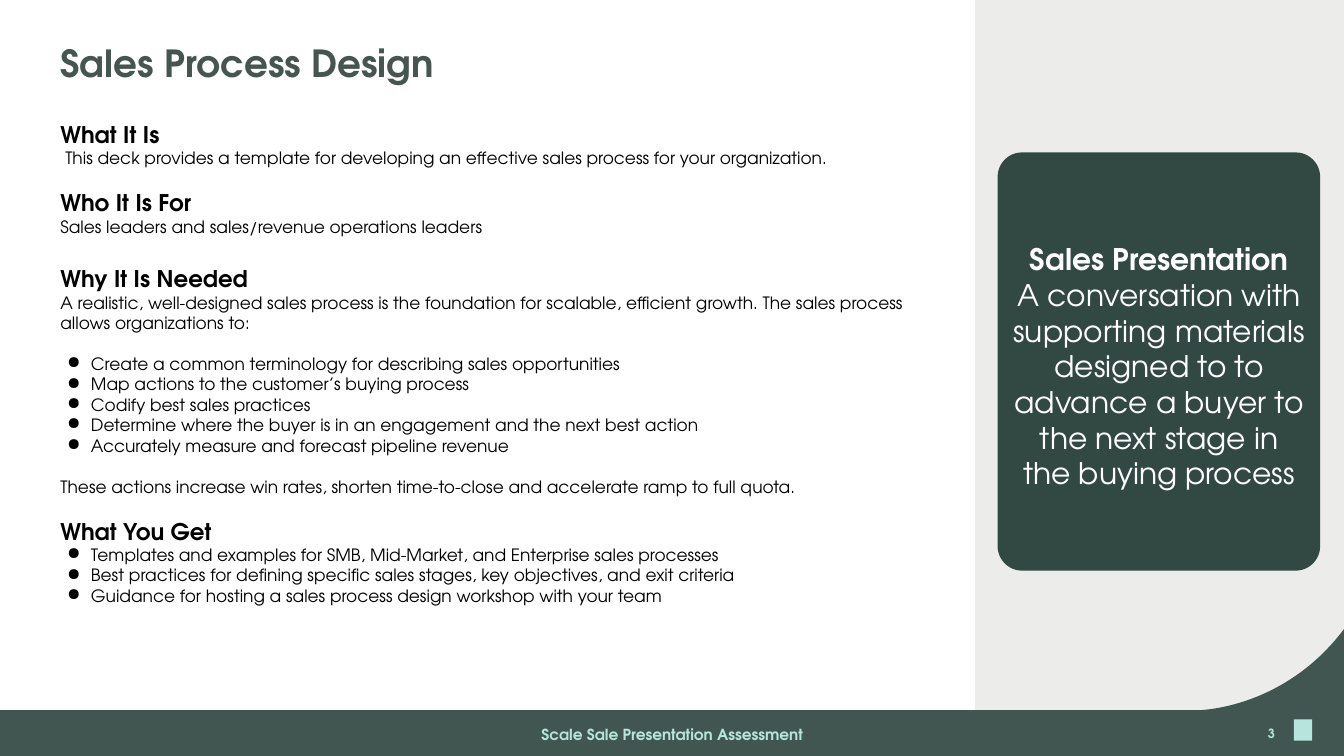
from dataclasses import dataclass

from lxml.etree import SubElement
from pptx import Presentation
from pptx.dml.color import RGBColor
from pptx.enum.shapes import MSO_SHAPE as Shape
from pptx.enum.text import MSO_ANCHOR as Anchor, PP_ALIGN as Align
from pptx.oxml.ns import qn
from pptx.util import Inches, Pt

COLUMNS, ROWS = 220, 124


@dataclass(frozen=True)
class Theme:
    """Colours and type sizes of the slide."""
    font: str = "TeX Gyre Adventor"
    title: str = "455550"
    ink: str = "000000"
    white: str = "FFFFFF"
    panel: str = "ECEDEB"
    card: str = "324943"
    footer: str = "415651"
    mint: str = "B5E5DC"
    title_size: int = 44
    card_size: int = 35
    heading_size: int = 27
    body_size: int = 20
    footer_size: int = 18
    number_size: int = 15


class SlideBuilder:
    """Draws styled elements on one slide, placed by grid columns and rows."""

    def __init__(self, presentation, theme):
        self.theme = theme
        self.column = presentation.slide_width / COLUMNS
        self.row = presentation.slide_height / ROWS
        self.slide = presentation.slides.add_slide(presentation.slide_layouts[6])

    def place(self, left, top, width, height):
        """Turn grid units into slide lengths."""
        return (round(left * self.column), round(top * self.row),
                round(width * self.column), round(height * self.row))

    def paint(self, shape, colour):
        """Give a shape a flat fill without line or shadow."""
        shape.shadow.inherit = False
        shape.fill.solid()
        shape.fill.fore_color.rgb = RGBColor.from_string(colour)
        shape.line.fill.background()

    def block(self, area, colour, radius=None):
        """Add a rectangle, rounded when a radius is given."""
        kind = Shape.RECTANGLE if radius is None else Shape.ROUNDED_RECTANGLE
        shape = self.slide.shapes.add_shape(kind, *self.place(*area))
        if radius is not None:
            shape.adjustments[0] = radius
        self.paint(shape, colour)

    def swoosh(self, top, bend, peak, colour, steps=40):
        """Add a full-width band whose right end curves upwards."""
        controls = ((bend, top), (bend, top), (COLUMNS - 10, top), (COLUMNS, peak))
        points = [(0, ROWS), (0, top)]
        for step in range(steps + 1):
            t = step / steps
            weights = ((1 - t) ** 3, 3 * t * (1 - t) ** 2, 3 * t * t * (1 - t), t ** 3)
            points.append(tuple(sum(w * point[axis] for w, point in zip(weights, controls))
                                for axis in (0, 1)))
        points.append((COLUMNS, ROWS))
        corners = [(round(x * self.column), round(y * self.row)) for x, y in points]
        builder = self.slide.shapes.build_freeform(*corners[0])
        builder.add_line_segments(corners[1:], close=True)
        self.paint(builder.convert_to_shape(), colour)

    def text(self, area, paragraphs, colour, inset=0.05, anchor=Anchor.MIDDLE, **common):
        """Add a text box; each paragraph is a text and a dict of formats."""
        frame = self.slide.shapes.add_textbox(*self.place(*area)).text_frame
        settings = {"word_wrap": True, "vertical_anchor": anchor,
                    "margin_left": Inches(0.1), "margin_right": Inches(0.1),
                    "margin_top": Inches(inset), "margin_bottom": Inches(inset)}
        for name, value in settings.items():
            setattr(frame, name, value)
        for index, (words, formats) in enumerate(paragraphs):
            paragraph = frame.add_paragraph() if index else frame.paragraphs[0]
            self.format(paragraph, words, colour, **{**common, **formats})

    def format(self, paragraph, words, colour, size, bold=False, bullet=False,
               indent=0, **layout):
        """Fill one paragraph and apply its layout and font."""
        properties = paragraph._p.get_or_add_pPr()
        if bullet:
            properties.set("marL", str(Inches(0.5)))
            properties.set("indent", str(Inches(-0.39)))
            SubElement(properties, qn("a:buChar")).set("char", "●")
        elif indent:
            properties.set("marL", str(Inches(indent)))
        for name, value in layout.items():
            setattr(paragraph, name, value)
        run = paragraph.add_run()
        run.text = words
        for name, value in {"name": self.theme.font, "size": Pt(size), "bold": bold}.items():
            setattr(run.font, name, value)
        run.font.color.rgb = RGBColor.from_string(colour)


def main():
    """Build and save the slide."""
    presentation = Presentation()
    presentation.slide_width, presentation.slide_height = Inches(21.99), Inches(12.37)
    theme = Theme()
    builder = SlideBuilder(presentation, theme)

    builder.block((159.6, 0, 60.4, 117.5), theme.panel)
    builder.swoosh(116.5, 196, 103.2, theme.footer)
    builder.block((163.3, 25, 52.8, 68.6), theme.card, radius=0.076)
    builder.block((211.8, 118, 3, 3.5), theme.mint)

    builder.text((8.9, 6.9, 139.8, 7.7), [("Sales Process Design", {})], theme.title,
                 anchor=Anchor.BOTTOM, size=theme.title_size, bold=True, line_spacing=0.9)

    heading = {"size": theme.heading_size, "bold": True}
    gap = {"space_before": Pt(24.3)}
    wide_gap = {"space_before": Pt(32.8)}
    bullet = {"bullet": True}
    body = [
        ("What It Is", heading),
        ("This deck provides a template for developing an effective sales process "
         "for your organization.", {"indent": 0.08}),
        ("Who It Is For", heading | gap),
        ("Sales leaders and sales/revenue operations leaders", {}),
        ("Why It Is Needed", heading | wide_gap),
        ("A realistic, well-designed sales process is the foundation for scalable, "
         "efficient growth. The sales process allows organizations to:", {}),
        ("Create a common terminology for describing sales opportunities", bullet | gap),
        ("Map actions to the customer’s buying process", bullet),
        ("Codify best sales practices", bullet),
        ("Determine where the buyer is in an engagement and the next best action", bullet),
        ("Accurately measure and forecast pipeline revenue", bullet),
        ("These actions increase win rates, shorten time-to-close and accelerate "
         "ramp to full quota.", gap),
        ("What You Get", heading | gap),
        ("Templates and examples for SMB, Mid-Market, and Enterprise sales processes", bullet),
        ("Best practices for defining specific sales stages, key objectives, "
         "and exit criteria", bullet),
        ("Guidance for hosting a sales process design workshop with your team", bullet),
    ]
    builder.text((8.9, 18.75, 142, 85.5), body, theme.ink, inset=0.1, anchor=Anchor.TOP,
                 size=theme.body_size)

    definition = [
        ("Sales Presentation", {"bold": True}),
        ("A conversation with supporting materials designed to to advance a buyer "
         "to the next stage in the buying process", {}),
    ]
    builder.text((164.9, 40.6, 49.7, 38.8), definition, theme.white, inset=0.1,
                 size=theme.card_size, alignment=Align.CENTER)

    builder.text((73.1, 118.7, 73.9, 3.5), [("Scale Sale Presentation Assessment", {})],
                 theme.mint, size=theme.footer_size, bold=True, alignment=Align.CENTER)
    builder.text((204.2, 118.7, 5.5, 3.4), [("3", {})], theme.mint, bold=True,
                 size=theme.number_size, alignment=Align.RIGHT, line_spacing=0.9)
    presentation.save("out.pptx")


if __name__ == "__main__":
    main()
